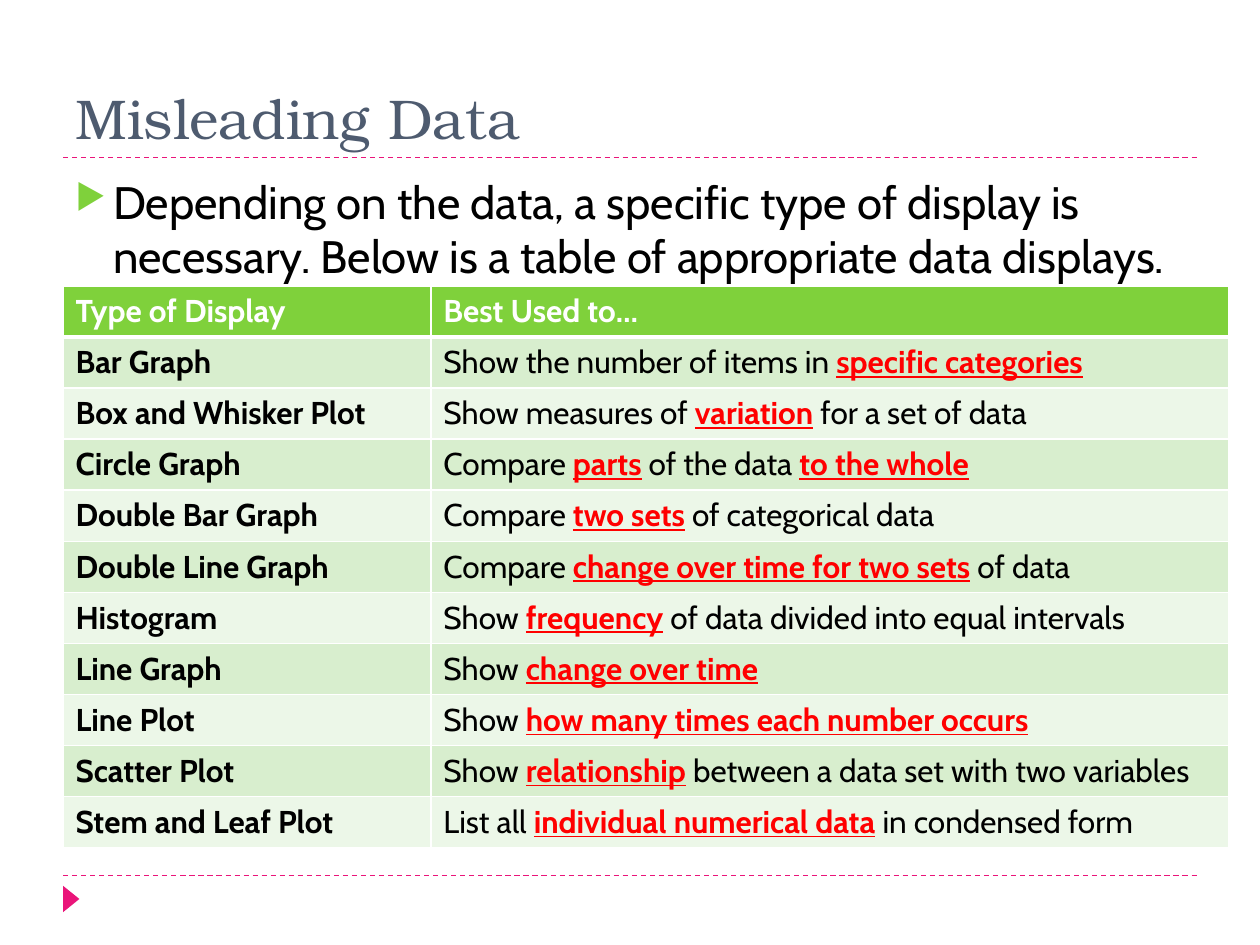
from lxml.etree import SubElement
from pptx import Presentation
from pptx.dml.color import RGBColor
from pptx.enum.dml import MSO_LINE
from pptx.enum.shapes import MSO_CONNECTOR, MSO_SHAPE
from pptx.enum.text import MSO_ANCHOR, PP_ALIGN
from pptx.oxml import parse_xml
from pptx.oxml.ns import nsdecls, qn
from pptx.util import Inches, Pt

PINK, GREEN, SLATE = "EA157A", "7FD13B", "4E5B6F"
BLACK, WHITE, RED = "000000", "FFFFFF", "FF0000"
BANDS = ["ECF7E8", "D8EECE"]

# Asterisks enclose the key words of each row
ROWS = [
    ("Type of Display", "Best Used to…"),
    ("Bar Graph", "Show the number of items in *specific categories*"),
    ("Box and Whisker Plot", "Show measures of *variation* for a set of data"),
    ("Circle Graph", "Compare *parts* of the data *to the whole*"),
    ("Double Bar Graph", "Compare *two sets* of categorical data"),
    ("Double Line Graph", "Compare *change over time for two sets* of data"),
    ("Histogram", "Show *frequency* of data divided into equal intervals"),
    ("Line Graph", "Show *change over time*"),
    ("Line Plot", "Show *how many times each number occurs*"),
    ("Scatter Plot", "Show *relationship* between a data set with two variables"),
    ("Stem and Leaf Plot", "List all *individual numerical data* in condensed form"),
]


def color(value):
    return RGBColor.from_string(value)


def add_run(paragraph, text, fill, **formats):
    run = paragraph.add_run()
    run.text = text
    run.font.color.rgb = color(fill)
    for name, value in formats.items():
        setattr(run.font, name, value)


presentation = Presentation()
presentation.slide_width, presentation.slide_height = Inches(10), Inches(7.5)
slide = presentation.slides.add_slide(presentation.slide_layouts[5])
shapes = slide.shapes
left, width = Inches(0.5), Inches(9)

# Dashed rules under the title and above the footer
for y in (Inches(6.95), Inches(1.25)):
    rule = shapes.add_connector(MSO_CONNECTOR.STRAIGHT, left, y, left + width, y)
    rule.line.color.rgb = color(PINK)
    rule.line.width = Pt(0.75)
    rule.line.dash_style = MSO_LINE.DASH
    SubElement(rule._element.spPr, qn("a:effectLst"))

# Footer marker
marker = shapes.add_shape(MSO_SHAPE.ISOSCELES_TRIANGLE, Inches(0.46), Inches(7.07),
                          Inches(0.21), Inches(0.13))
marker.rotation = 90
marker.shadow.inherit = False
marker.fill.solid()
marker.fill.fore_color.rgb = color(PINK)
marker.line.fill.background()

# Title
title = shapes.title
title.left, title.top, title.width, title.height = left, Inches(0.17), width, Inches(1.08)
title.text_frame.vertical_anchor = MSO_ANCHOR.BOTTOM
paragraph = title.text_frame.paragraphs[0]
paragraph.alignment = PP_ALIGN.LEFT
add_run(paragraph, "Misleading Data", SLATE, size=Pt(32), name="TeX Gyre Bonum")

# Introduction with a triangle bullet
body = shapes.add_textbox(left, Inches(1.33), width, Inches(5.4))
body.text_frame.word_wrap = True
paragraph = body.text_frame.paragraphs[0]
paragraph.space_before = Pt(6)
add_run(paragraph, "Depending on the data, a specific type of display is necessary. "
        "Below is a table of appropriate data displays.", BLACK, size=Pt(26), name="Cabin")
properties = paragraph._p.get_or_add_pPr()
properties.set("marL", str(Inches(0.3)))
properties.set("indent", str(-Inches(0.3)))
for bullet in (f'<a:buClr {nsdecls("a")}><a:srgbClr val="{GREEN}"/></a:buClr>',
               f'<a:buSzPct {nsdecls("a")} val="76000"/>',
               f'<a:buChar {nsdecls("a")} char="▶"/>'):
    properties.append(parse_xml(bullet))

# Table of displays
table = shapes.add_table(len(ROWS), 2, left, Inches(2.27), Inches(9.25), Inches(4.46)).table
table.columns[0].width, table.columns[1].width = Inches(2.92), Inches(6.33)
for row, texts in enumerate(ROWS):
    for column, text in enumerate(texts):
        cell = table.cell(row, column)
        paragraph = cell.text_frame.paragraphs[0]
        for index, part in enumerate(text.split("*")):
            if not part:
                continue
            key = index % 2 == 1
            fill = WHITE if row == 0 else RED if key else BLACK
            add_run(paragraph, part, fill, size=Pt(18), name="Cabin",
                    bold=row == 0 or column == 0 or key, underline=key)

        # White borders, heavier below the header
        edges = {"L": 1, "R": 1, "T": 3 if row == 1 else 1, "B": 3 if row == 0 else 1}
        for edge, weight in edges.items():
            cell._tc.get_or_add_tcPr().append(parse_xml(
                f'<a:ln{edge} {nsdecls("a")} w="{Pt(weight)}"><a:solidFill>'
                f'<a:srgbClr val="{WHITE}"/></a:solidFill></a:ln{edge}>'))
        cell.fill.solid()
        cell.fill.fore_color.rgb = color(GREEN if row == 0 else BANDS[row % 2])

presentation.save("out.pptx")
